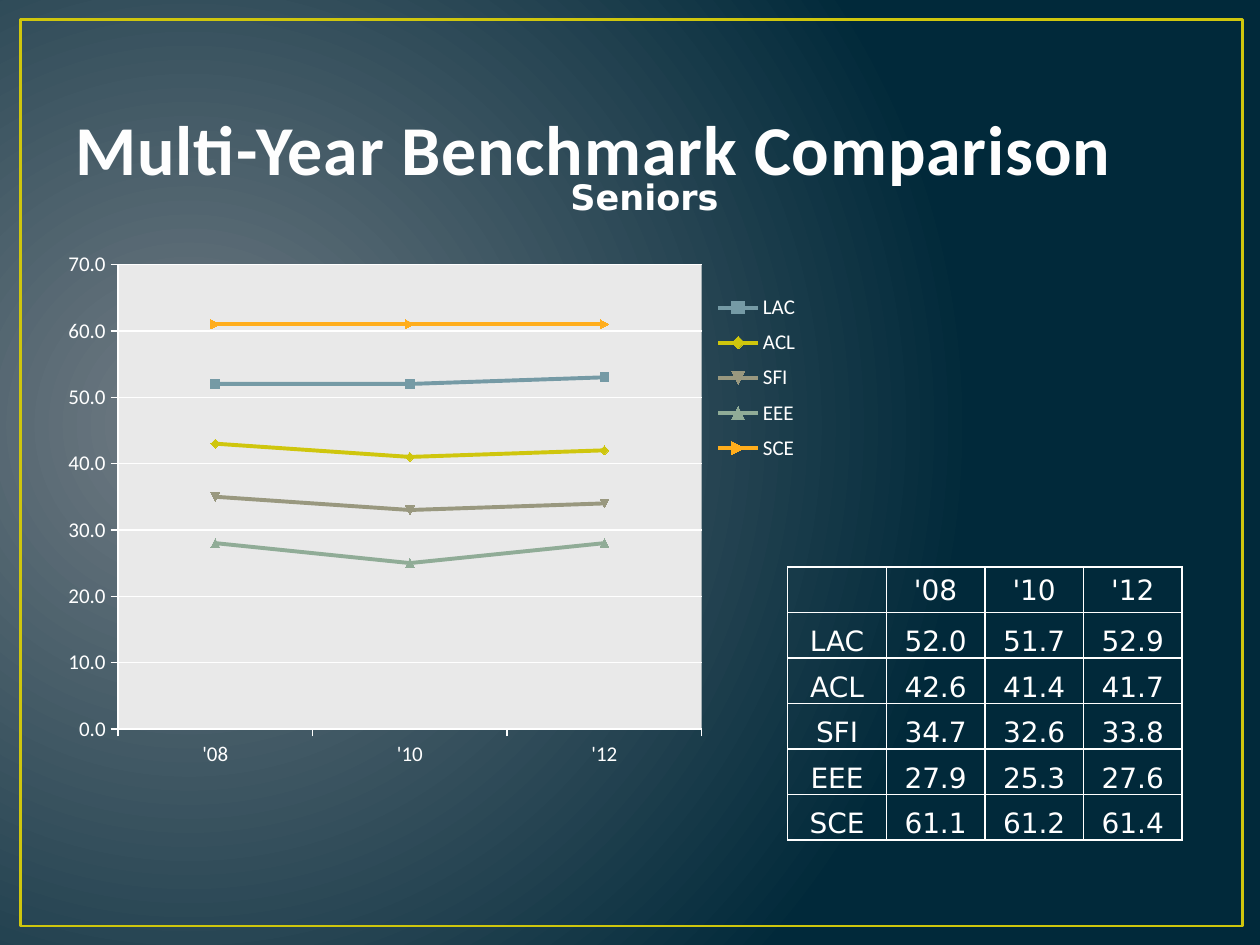
import pptx
import pptx.chart.data
import pptx.dml.color
import pptx.enum.chart
import pptx.enum.text
import pptx.oxml
import pptx.util
from pptx.util import Cm

RGBColor = pptx.dml.color.RGBColor
Pt = pptx.util.Pt
Align = pptx.enum.text.PP_ALIGN
Anchor = pptx.enum.text.MSO_ANCHOR
Tick = pptx.enum.chart.XL_TICK_MARK

WHITE = RGBColor(0xFF, 0xFF, 0xFF)
TITLE = RGBColor(0xFE, 0xFE, 0xFE)
GOLD = RGBColor(0xCF, 0xC6, 0x0D)
PLOT = RGBColor(0xE9, 0xE9, 0xE9)
LINES = [RGBColor(0x75, 0x9A, 0xA5), GOLD, RGBColor(0x99, 0x98, 0x7F),
         RGBColor(0x90, 0xAC, 0x97), RGBColor(0xFF, 0xAD, 0x1C)]

YEARS = ["'08", "'10", "'12"]
SCORES = {
    "LAC": (52.0, 51.7, 52.9),
    "ACL": (42.6, 41.4, 41.7),
    "SFI": (34.7, 32.6, 33.8),
    "EEE": (27.9, 25.3, 27.6),
    "SCE": (61.1, 61.2, 61.4),
}

NS = ('xmlns:a="http://schemas.openxmlformats.org/drawingml/2006/main" '
      'xmlns:c="http://schemas.openxmlformats.org/drawingml/2006/chart"')


def parse(xml):
    """Turn markup into an element, adding the namespaces to its first tag."""
    head, tail = xml.split(">", 1)
    return pptx.oxml.parse_xml(f"{head} {NS}>{tail}")


def write(frame, text, size=16, font="DejaVu Sans", color=WHITE, bold=False,
          align=Align.CENTER, gap=0):
    """Put one formatted line into a text frame; gap is letter spacing in points."""
    para = frame.paragraphs[0]
    para.alignment = align
    run = para.add_run()
    run.text = text
    run.font.size, run.font.name, run.font.bold = Pt(size), font, bold
    run.font.color.rgb = color
    if gap:
        run.font._element.set("spc", str(int(gap * 100)))


def layout(*box, inner=False):
    """Manual chart layout: left, top, width, height in percent of the chart."""
    x, y, w, h = (f"{part / 100:.3f}" for part in box)
    target = '<c:layoutTarget val="inner"/>' if inner else ""
    return parse(
        f'<c:layout><c:manualLayout>{target}<c:xMode val="edge"/><c:yMode val="edge"/>'
        f'<c:x val="{x}"/><c:y val="{y}"/><c:w val="{w}"/><c:h val="{h}"/>'
        '</c:manualLayout></c:layout>')


class Deck:
    def __init__(self, wide, high):
        self.show = pptx.Presentation()
        self.show.slide_width, self.show.slide_height = wide, high
        self.slide = self.show.slides.add_slide(self.show.slide_layouts[6])
        self.shapes = self.slide.shapes

    def back(self, start, end):
        """Circular gradient behind the slide, centred towards the left."""
        fill = self.slide.background.fill
        fill.gradient()
        for stop, color in zip(fill.gradient_stops, (start, end)):
            stop.color.rgb = RGBColor.from_string(color)
        grad = self.slide.background._cSld.find(".//{*}gradFill")
        grad.replace(grad.find("{*}lin"), parse(
            '<a:path path="circle"><a:fillToRect l="15000" t="50000" '
            'r="85000" b="60000"/></a:path>'))

    def frame(self, *box):
        rect = self.shapes.add_shape(1, *box)
        rect.shadow.inherit = False
        rect.fill.background()
        rect.line.color.rgb, rect.line.width = GOLD, Pt(1.5)

    def text(self, text, *box, anchor=Anchor.TOP, **style):
        frame = self.shapes.add_textbox(*box).text_frame
        frame.word_wrap, frame.vertical_anchor = True, anchor
        write(frame, text, **style)

    def chart(self, *box):
        data = pptx.chart.data.CategoryChartData(number_format="0.0")
        data.categories = YEARS
        for name, row in SCORES.items():
            data.add_series(name, [round(score) for score in row])
        kind = pptx.enum.chart.XL_CHART_TYPE.LINE_MARKERS
        chart = self.shapes.add_chart(kind, *box, data).chart
        chart.has_title = False
        chart.font.name, chart.font.size = "Calibri", Pt(12)
        chart.font.color.rgb = WHITE

        plot = chart.plots[0]
        plot.vary_by_categories = False
        for line, color in zip(plot.series, LINES):
            line.smooth = False
            line.format.line.color.rgb, line.format.line.width = color, Pt(2.25)
            mark = line.marker
            mark.size = 5
            mark.format.fill.solid()
            mark.format.fill.fore_color.rgb = color
            mark.format.line.color.rgb = color

        for axis in (chart.category_axis, chart.value_axis):
            axis.major_tick_mark, axis.minor_tick_mark = Tick.OUTSIDE, Tick.NONE
            axis.format.line.color.rgb = WHITE
            axis.tick_labels.font.size = Pt(12)
        value = chart.value_axis
        value.minimum_scale, value.maximum_scale, value.major_unit = 0, 70, 10
        value.tick_labels.number_format = "0.0"
        value.tick_labels.number_format_is_linked = False
        value.major_gridlines.format.line.color.rgb = WHITE

        chart.has_legend = True
        legend = chart.legend
        legend.position = pptx.enum.chart.XL_LEGEND_POSITION.RIGHT
        legend.include_in_layout = False
        legend.font.size, legend.font.color.rgb = Pt(12), WHITE
        self.place(legend._element, layout(86, 8, 12, 34.7))

        area = plot._element.getparent()
        self.place(area, layout(8.5, 4.2, 76.3, 86.7, inner=True))
        area.append(parse(f'<c:spPr><a:solidFill><a:srgbClr val="{PLOT}"/>'
                          '</a:solidFill></c:spPr>'))

    def place(self, part, spot):
        """Give a plot area or legend its layout in place of any it has."""
        old = part.find("{*}layout")
        if old is not None:
            part.remove(old)
        first = part.find("{*}legendPos")
        part.insert(0 if first is None else 1, spot)

    def table(self, rows, *box):
        table = self.shapes.add_table(len(rows), len(rows[0]), *box).table
        for r, row in enumerate(rows):
            for c, text in enumerate(row):
                self.cell(table.cell(r, c), text, Anchor.BOTTOM if r else Anchor.MIDDLE)

    def cell(self, cell, text, anchor):
        cell.margin_left = cell.margin_right = cell.margin_top = Cm(0.03)
        cell.margin_bottom = 0
        cell.vertical_anchor = anchor
        write(cell.text_frame, text)
        props = cell._tc.get_or_add_tcPr()
        for side in ("lnL", "lnR", "lnT", "lnB"):
            props.append(parse(f'<a:{side} w="12700"><a:solidFill><a:srgbClr '
                               f'val="{WHITE}"/></a:solidFill></a:{side}>'))
        cell.fill.background()


def main():
    deck = Deck(Cm(25.4), Cm(19.05))
    deck.back("717C84", "01293A")
    deck.frame(Cm(0.41), Cm(0.39), Cm(24.64), Cm(18.28))
    deck.text("Multi-Year Benchmark Comparison", Cm(1.27), Cm(0.76), Cm(22.86), Cm(3.18),
              anchor=Anchor.BOTTOM, size=40, font="Calibri", color=TITLE, bold=True,
              align=Align.LEFT, gap=0.5)
    deck.text("Seniors", Cm(9.5), Cm(3.42), Cm(6.99), Cm(1.12), size=20, bold=True)
    deck.chart(Cm(1.07), Cm(4.88), Cm(15.42), Cm(10.8))
    rows = [["", *YEARS]]
    rows += [[name, *(f"{score:.1f}" for score in row)] for name, row in SCORES.items()]
    deck.table(rows, Cm(15.88), Cm(11.43), Cm(7.95), Cm(5.51))
    deck.show.save("out.pptx")


if __name__ == "__main__":
    main()
